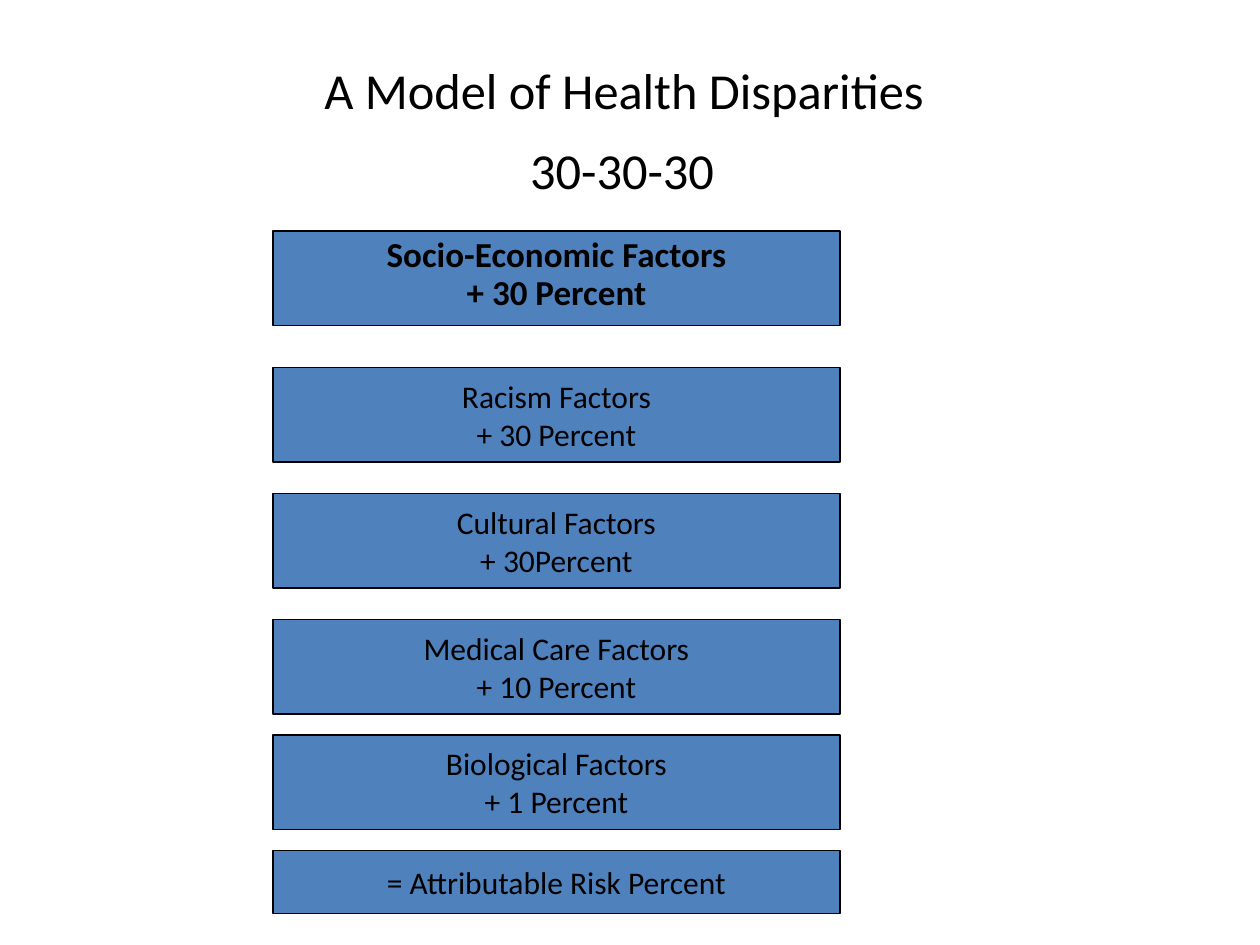
from dataclasses import dataclass

import pptx
import pptx.dml.color
import pptx.enum.shapes
import pptx.enum.text
import pptx.oxml
import pptx.oxml.ns
import pptx.util

PX = 7620  # EMU in one px, 120 px to the inch


@dataclass(frozen=True)
class Theme:
    font: str = "Calibri"
    ink: str = "000000"
    fill: str = "4F81BD"
    title_size: float = 28.8
    title_end_size: float = 39.6
    lead_size: float = 20
    factor_size: float = 18
    line_width: float = 1


THEME = Theme()
COLUMN_LEFT, COLUMN_WIDTH, BOX_HEIGHT = 260, 540, 90
TITLE_BOX = (90, 50, 1020, 150)
LEAD_BOX = (COLUMN_LEFT, 220, COLUMN_WIDTH, BOX_HEIGHT)
LEAD_TEXT = "Socio-Economic Factors\n+ 30 Percent"
FACTORS = [
    (350, BOX_HEIGHT, "Racism Factors\n+ 30 Percent"),
    (470, BOX_HEIGHT, "Cultural Factors\n+ 30Percent"),
    (590, BOX_HEIGHT, "Medical Care Factors\n+ 10 Percent"),
    (700, BOX_HEIGHT, "Biological Factors\n+ 1 Percent"),
    (810, 60, "= Attributable Risk Percent"),
]


def color(value):
    return pptx.dml.color.RGBColor.from_string(value)


def place(shape, box):
    shape.left, shape.top, shape.width, shape.height = (side * PX for side in box)


def style_font(font, size, bold=False):
    font.name = THEME.font
    font.size = pptx.util.Pt(size)
    font.bold = bold
    font.color.rgb = color(THEME.ink)


def style_box(shape):
    shape.fill.solid()
    shape.fill.fore_color.rgb = color(THEME.fill)
    shape.line.color.rgb = color(THEME.ink)
    shape.line.width = pptx.util.Pt(THEME.line_width)


def write_centred(frame, text, size, bold=False):
    frame.text = text
    for para in frame.paragraphs:
        para.alignment = pptx.enum.text.PP_ALIGN.CENTER
        style_font(para.font, size, bold)


def fill_title(title, box):
    """The larger closing space gives the second line its height."""
    place(title, box)
    frame = title.text_frame
    frame.auto_size = pptx.enum.text.MSO_AUTO_SIZE.NONE
    frame.vertical_anchor = pptx.enum.text.MSO_ANCHOR.MIDDLE
    write_centred(frame, "A Model of Health Disparities \v30-30-30", THEME.title_size)
    span = frame.paragraphs[0].add_run()
    span.text = " "
    span.font.size = pptx.util.Pt(THEME.title_end_size)


def fill_lead(body, box):
    place(body, box)
    style_box(body)
    frame = body.text_frame
    frame.auto_size = pptx.enum.text.MSO_AUTO_SIZE.NONE
    write_centred(frame, LEAD_TEXT, THEME.lead_size, bold=True)
    for para in frame.paragraphs:
        para.line_spacing = 0.9
        para.space_before = pptx.util.Pt(0)
        properties = para._p.get_or_add_pPr()
        properties.set("marL", str(45 * PX))
        properties.set("indent", str(-45 * PX))
        no_bullet = pptx.oxml.parse_xml(f"<a:buNone {pptx.oxml.ns.nsdecls('a')}/>")
        properties.insert_element_before(no_bullet, "a:tabLst", "a:defRPr", "a:extLst")


def add_factor(page, box, text):
    shape = page.shapes.add_shape(
        pptx.enum.shapes.MSO_SHAPE.RECTANGLE, *(side * PX for side in box)
    )
    shape.shadow.inherit = False
    style_box(shape)
    frame = shape.text_frame
    frame.word_wrap = False
    frame.vertical_anchor = pptx.enum.text.MSO_ANCHOR.MIDDLE
    write_centred(frame, text, THEME.factor_size)


def build_page(deck):
    page = deck.slides.add_slide(deck.slide_layouts[1])
    fill_title(page.shapes.title, TITLE_BOX)
    fill_lead(page.placeholders[1], LEAD_BOX)
    for top, height, text in FACTORS:
        add_factor(page, (COLUMN_LEFT, top, COLUMN_WIDTH, height), text)


def main():
    deck = pptx.Presentation()
    deck.slide_width, deck.slide_height = 1200 * PX, 900 * PX
    build_page(deck)
    deck.save("out.pptx")


if __name__ == "__main__":
    main()
